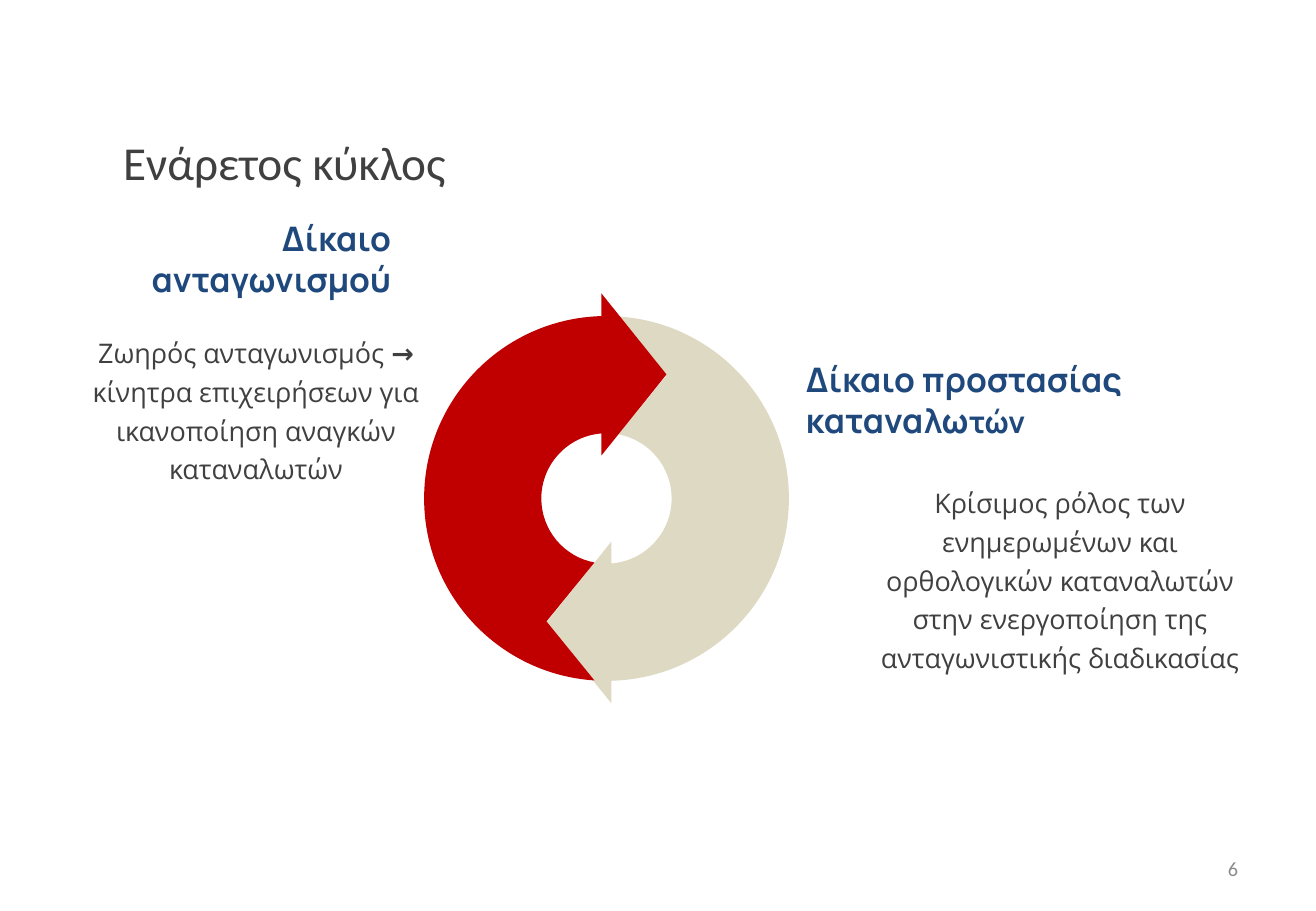
from dataclasses import dataclass
from math import atan2, cos, hypot, pi, sin, tan, tau

from lxml import etree
from pptx import Presentation
from pptx.dml.color import RGBColor
from pptx.enum.text import MSO_ANCHOR, PP_ALIGN
from pptx.oxml.ns import qn
from pptx.util import Emu, Pt

TOP, MIDDLE, BOTTOM = MSO_ANCHOR.TOP, MSO_ANCHOR.MIDDLE, MSO_ANCHOR.BOTTOM
LEFT, CENTER, RIGHT = PP_ALIGN.LEFT, PP_ALIGN.CENTER, PP_ALIGN.RIGHT
PX = 914400 / 121.5
TITLE_ONLY = 5


@dataclass(frozen=True)
class Style:
    font: str
    size: int
    color: str
    bold: bool = False


@dataclass(frozen=True)
class Theme:
    title = Style("Calibri", 28, "404040")
    heading = Style("Manrope", 20, "1F497D", True)
    heading_end = Style("Manrope", 18, "1F497D", True)
    body = Style("Open Sans", 16, "404040")
    body_bold = Style("Open Sans", 16, "404040", True)
    number = Style("Calibri", 12, "8C8C8C")
    competition = "C00000"
    consumers = "DDD9C3"


THEME = Theme()


def px(length):
    return Emu(round(length * PX))


def write(shape, runs, align, anchor, spacing=1.0):
    frame = shape.text_frame
    frame.word_wrap = True
    frame.vertical_anchor = anchor
    paragraph = frame.paragraphs[0]
    paragraph.alignment = align
    paragraph.line_spacing = spacing
    for text, style in runs:
        run = paragraph.add_run()
        run.text = text
        run.font.name = style.font
        run.font.size = Pt(style.size)
        run.font.bold = style.bold
        run.font.color.rgb = RGBColor.from_string(style.color)


def add_text(slide, box, runs, align, anchor, spacing=1.0):
    label = slide.shapes.add_textbox(*map(px, box))
    write(label, runs, align, anchor, spacing)


def add_title(slide, box, text):
    title = slide.shapes.title
    title.left, title.top, title.width, title.height = map(px, box)
    write(title, [(text, THEME.title)], LEFT, MIDDLE)


def left_arc(start, end):
    """Two Bezier curves around the origin, meeting at its left side."""
    radius = hypot(*start)
    first, last = (atan2(y, x) % tau for x, y in (start, end))
    curves = []
    for a, b in ((first, pi), (pi, last)):
        pull = 4 / 3 * tan((b - a) / 4)
        curves.append([
            (radius * (cos(a) - pull * sin(a)), radius * (sin(a) + pull * cos(a))),
            (radius * (cos(b) + pull * sin(b)), radius * (sin(b) - pull * cos(b))),
            (radius * cos(b), radius * sin(b)),
        ])
    return curves


def bend(shape, segments):
    """Turn every run of three lines that stands for a curve into that curve."""
    lines = iter(shape.element.xpath(".//a:lnTo"))
    for segment in segments:
        parts = [next(lines) for _ in segment]
        if len(parts) == 3:
            curve = etree.Element(qn("a:cubicBezTo"))
            parts[0].addprevious(curve)
            for part in parts:
                curve.append(part[0])
                part.getparent().remove(part)


def add_cycle(slide, box):
    """Two half-ring arrows, the second being the first turned by 180 degrees."""
    left, top, width, height = box
    center_x, center_y = left + width / 2, top + height / 2
    tip = (60, -124)
    segments = [
        [(-5, -43)], [(-5, -65)],
        *left_arc((-5, -65), (-12, 64)),
        [(-60, 123)], [(-12, 182)],
        *left_arc((-12, 182), (-5, -182)),
        [(-5, -205)],
    ]
    outline = [tip, *(point for segment in segments for point in segment)]
    for turn, color in ((-1, THEME.consumers), (1, THEME.competition)):
        points = [(px(center_x + turn * x), px(center_y + turn * y)) for x, y in outline]
        builder = slide.shapes.build_freeform(*points[0])
        builder.add_line_segments(points[1:], close=True)
        half = builder.convert_to_shape()
        bend(half, segments)
        half.shadow.inherit = False
        half.fill.solid()
        half.fill.fore_color.rgb = RGBColor.from_string(color)
        half.line.fill.background()


def add_competition(slide, left, top):
    add_text(slide, (left + 9, top, 335, 53),
             [("Δίκαιο ανταγωνισμού", THEME.heading)], RIGHT, BOTTOM)
    add_text(slide, (left, top + 72, 394, 165), [
        ("Ζωηρός ανταγωνισμός ", THEME.body),
        ("→ ", THEME.body_bold),
        ("κίνητρα επιχειρήσεων για ικανοποίηση αναγκών καταναλωτών", THEME.body),
    ], CENTER, TOP, 1.2)


def add_consumers(slide, left, top):
    add_text(slide, (left, top, 498, 53), [
        ("Δίκαιο προστασίας καταναλω", THEME.heading),
        ("τών", THEME.heading_end),
    ], LEFT, BOTTOM)
    add_text(slide, (left + 69, top + 81, 394, 205), [
        ("Κρίσιμος ρόλος των ενημερωμένων και ορθολογικών καταναλωτών "
         "στην ενεργοποίηση της ανταγωνιστικής διαδικασίας", THEME.body),
    ], CENTER, TOP, 1.2)


def main():
    deck = Presentation()
    deck.slide_width, deck.slide_height = px(1316), px(911)
    slide = deck.slides.add_slide(deck.slide_layouts[TITLE_ONLY])
    add_title(slide, (111, 103, 1164, 117), "Ενάρετος κύκλος")
    add_cycle(slide, (424, 294, 365, 409))
    add_consumers(slide, 794, 393)
    add_competition(slide, 59, 252)
    add_text(slide, (943, 844, 307, 49), [("6", THEME.number)], RIGHT, MIDDLE)
    deck.save("out.pptx")


if __name__ == "__main__":
    main()
